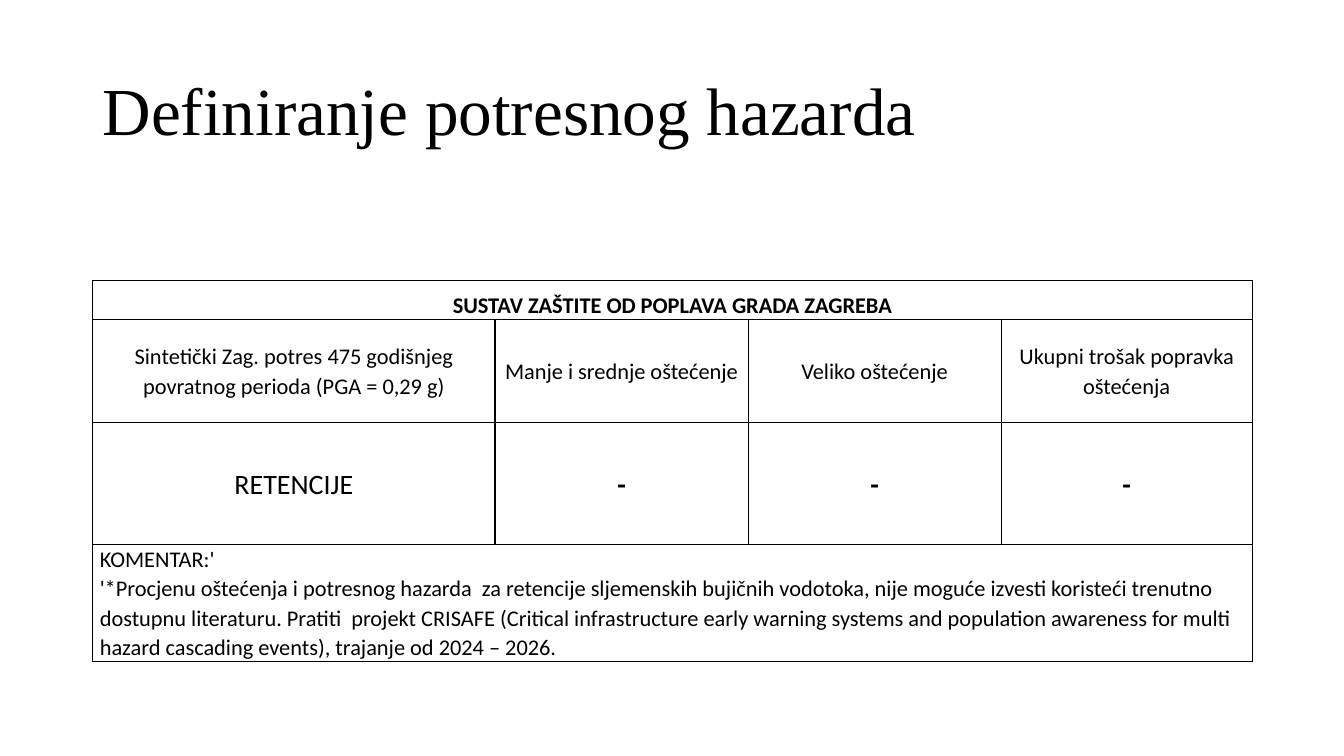
import copy

import pptx
import pptx.dml.color
import pptx.enum.text
import pptx.oxml
import pptx.oxml.ns
import pptx.util

RGBColor = pptx.dml.color.RGBColor
Inches, Pt = pptx.util.Inches, pptx.util.Pt
Align, Anchor = pptx.enum.text.PP_ALIGN, pptx.enum.text.MSO_ANCHOR
BLACK = RGBColor(0, 0, 0)
WIDE, HIGH = 13.33, 7.5
LEFT, SPAN = 0.92, 11.5

COLS = [3.99, 2.51, 2.51, 2.49]
ROWS = [0.39, 1.02, 1.21, 1.16]
BODY = [
    ["SUSTAV ZAŠTITE OD POPLAVA GRADA ZAGREBA"],
    ["Sintetički Zag. potres 475 godišnjeg povratnog perioda (PGA = 0,29 g)",
     "Manje i srednje oštećenje", "Veliko oštećenje", "Ukupni trošak popravka oštećenja"],
    ["RETENCIJE", "-", "-", "-"],
    ["KOMENTAR:'\n'*Procjenu oštećenja i potresnog hazarda  za retencije sljemenskih bujičnih "
     "vodotoka, nije moguće izvesti koristeći trenutno dostupnu literaturu. Pratiti  projekt "
     "CRISAFE (Critical infrastructure early warning systems and population awareness for multi "
     "hazard cascading events), trajanje od 2024 – 2026."],
]
LOOKS = [
    {"size": 16, "bold": True, "side": Align.CENTER, "anchor": Anchor.BOTTOM},
    {"size": 16, "bold": False, "side": Align.CENTER, "anchor": Anchor.MIDDLE},
    {"size": 20, "bold": False, "side": Align.CENTER, "anchor": Anchor.MIDDLE},
    {"size": 16, "bold": False, "side": Align.LEFT, "anchor": Anchor.TOP},
]


def put(obj, vals):
    """Set each named attribute of an object."""
    for name, val in vals.items():
        setattr(obj, name, val)


def write(para, text, face, size, bold=False):
    """Fill a paragraph with text in one font, line breaks included."""
    para.text = text
    for run in para.runs:
        put(run.font, {"name": face, "size": Pt(size), "bold": bold})
        run.font.color.rgb = BLACK
    for brk in para._p.findall(pptx.oxml.ns.qn("a:br")):
        brk.append(copy.deepcopy(para.runs[0].font._rPr))


def edge(cell):
    """Draw a thin black line on all four sides of a cell."""
    props = cell._tc.get_or_add_tcPr()
    for spot, side in enumerate(("lnL", "lnR", "lnT", "lnB")):
        props.insert(spot, pptx.oxml.parse_xml(
            f'<a:{side} {pptx.oxml.ns.nsdecls("a")} w="{Pt(1)}"><a:solidFill>'
            f'<a:srgbClr val="{BLACK}"/></a:solidFill></a:{side}>'))


def title(slide, left, top, width, height):
    """Place the slide title in the given box."""
    box = slide.shapes.add_textbox(*map(Inches, (left, top, width, height)))
    put(box.text_frame, {"word_wrap": True, "vertical_anchor": Anchor.MIDDLE})
    para = box.text_frame.paragraphs[0]
    para.line_spacing = 0.9
    write(para, "Definiranje potresnog hazarda", "Times New Roman", 48)


def grid(slide, left, top, width, height):
    """Place the damage table, with rows of one cell merged across."""
    table = slide.shapes.add_table(
        len(ROWS), len(COLS), *map(Inches, (left, top, width, height))).table
    put(table, {"first_row": False, "horz_banding": False})
    for col, size in zip(table.columns, COLS):
        col.width = Inches(size * width / sum(COLS))
    for row, size in zip(table.rows, ROWS):
        row.height = Inches(size * height / sum(ROWS))
        for cell in row.cells:
            cell.fill.background()
            edge(cell)
    for r, (texts, look) in enumerate(zip(BODY, LOOKS)):
        if len(texts) == 1:
            table.cell(r, 0).merge(table.cell(r, len(COLS) - 1))
        for c, text in enumerate(texts):
            cell = table.cell(r, c)
            put(cell, {"vertical_anchor": look["anchor"],
                       "margin_left": Inches(0.07), "margin_right": Inches(0.07),
                       "margin_top": 0, "margin_bottom": 0})
            para = cell.text_frame.paragraphs[0]
            put(para, {"alignment": look["side"], "line_spacing": 1.07, "space_after": Pt(8)})
            write(para, text, "Calibri", look["size"], look["bold"] or text == "-")


def main():
    """Build the slide and save it."""
    deck = pptx.Presentation()
    put(deck, {"slide_width": Inches(WIDE), "slide_height": Inches(HIGH)})
    slide = deck.slides.add_slide(deck.slide_layouts[6])
    title(slide, LEFT, 0.4, SPAN, 1.45)
    grid(slide, LEFT, 2.78, SPAN, sum(ROWS))
    deck.save("out.pptx")


if __name__ == "__main__":
    main()
